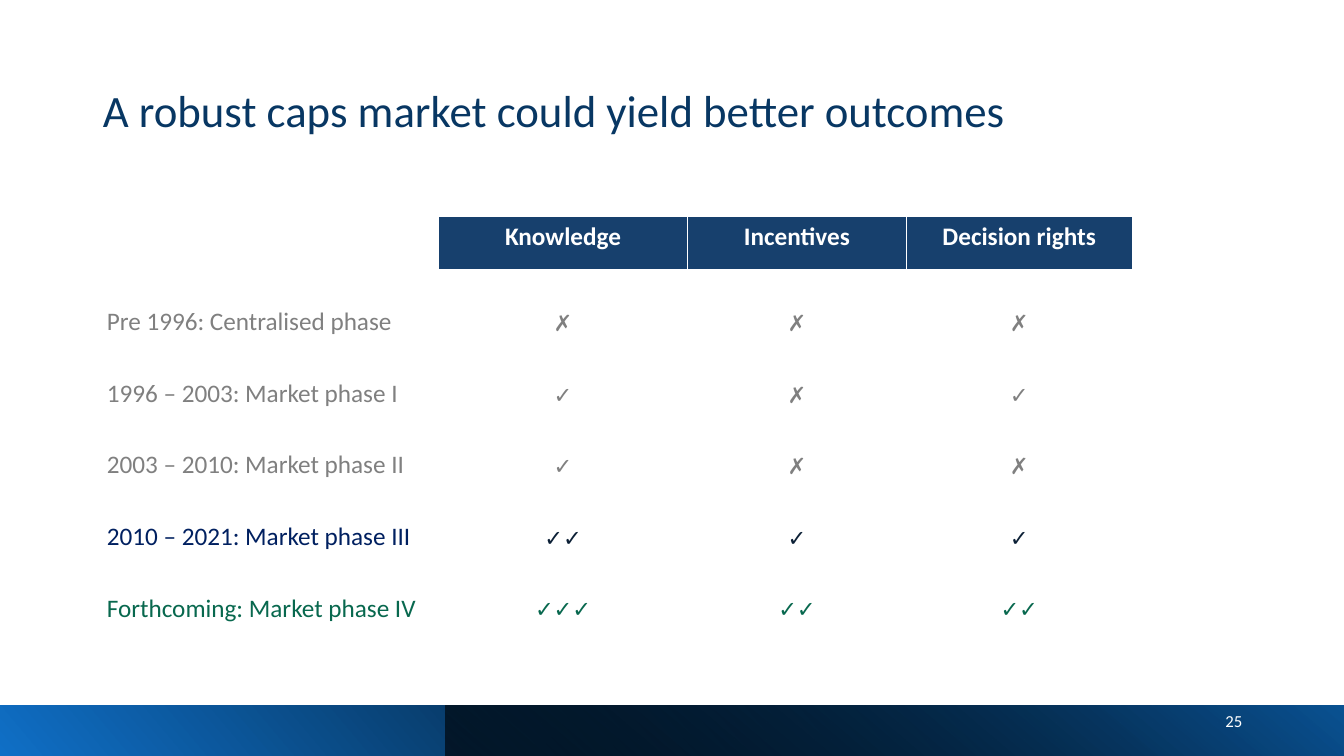
from typing import NamedTuple

from lxml import etree
from pptx import Presentation
from pptx.dml.color import RGBColor
from pptx.enum.shapes import MSO_SHAPE
from pptx.enum.text import MSO_ANCHOR, MSO_AUTO_SIZE, PP_ALIGN
from pptx.oxml import parse_xml
from pptx.oxml.ns import nsdecls, qn
from pptx.util import Inches, Pt

LEFT, CENTER, RIGHT = PP_ALIGN.LEFT, PP_ALIGN.CENTER, PP_ALIGN.RIGHT
TOP, MIDDLE, BOTTOM = MSO_ANCHOR.TOP, MSO_ANCHOR.MIDDLE, MSO_ANCHOR.BOTTOM
RECTANGLE = MSO_SHAPE.RECTANGLE
NO_AUTOFIT = MSO_AUTO_SIZE.NONE

FONT = "Calibri"
COLORS = {
    "title": "083763", "header": "17406D", "white": "FFFFFF", "past": "808080",
    "current": "002060", "current_mark": "0C2036", "future": "08684E",
    "bright": "0F6FC6", "black": "000000", "blue": "0B5394",
}


class GradientStop(NamedTuple):
    position: int
    color: str
    opacity: int = 100


class FooterBar(NamedTuple):
    left: float
    width: float
    rotation: int
    angle: int
    stops: list[GradientStop]


class Phase(NamedTuple):
    label: str
    marks: tuple[str, str, str]
    color: str
    mark_color: str


FOOTER_BARS = [
    FooterBar(0, 13.33, 180, 40, [GradientStop(0, "bright"), GradientStop(78, "black")]),
    FooterBar(4.42, 8.92, 0, 230, [GradientStop(0, "black", 63), GradientStop(100, "blue")]),
]
HEADERS = ["", "Knowledge", "Incentives", "Decision rights"]
PHASES = [
    Phase("Pre 1996: Centralised phase", ("✗", "✗", "✗"), "past", "past"),
    Phase("1996 – 2003: Market phase I", ("✓", "✗", "✓"), "past", "past"),
    Phase("2003 – 2010: Market phase II", ("✓", "✗", "✗"), "past", "past"),
    Phase("2010 – 2021: Market phase III", ("✓✓", "✓", "✓"), "current", "current_mark"),
    Phase("Forthcoming: Market phase IV", ("✓✓✓", "✓✓", "✓✓"), "future", "future"),
]
COLUMN_WIDTHS = [3.39, 2.47, 2.17, 2.24]
HEADER_HEIGHT, PHASE_HEIGHT = 0.54, 0.71


def write_text(text_frame, text: str, size: int, color: str, alignment=LEFT, bold=False) -> None:
    paragraph = text_frame.paragraphs[0]
    paragraph.alignment = alignment
    run = paragraph.add_run()
    run.text = text
    font_format = {"name": FONT, "size": Pt(size), "bold": bold}
    for attribute, value in font_format.items():
        setattr(run.font, attribute, value)
    run.font.color.rgb = RGBColor.from_string(COLORS[color])


def add_footer_bar(slide, bar: FooterBar) -> None:
    shape = slide.shapes.add_shape(
        RECTANGLE, Inches(bar.left), Inches(7), Inches(bar.width), Inches(0.5))
    shape.shadow.inherit = False
    shape.line.fill.background()
    shape.rotation = bar.rotation
    properties = shape._element.spPr
    properties.find(qn("a:xfrm")).set("flipH", "1")
    stops = "".join(
        f'<a:gs pos="{stop.position * 1000}"><a:srgbClr val="{COLORS[stop.color]}">'
        f'<a:alpha val="{stop.opacity * 1000}"/></a:srgbClr></a:gs>'
        for stop in bar.stops)
    gradient = parse_xml(
        f'<a:gradFill {nsdecls("a")} rotWithShape="1"><a:gsLst>{stops}</a:gsLst>'
        f'<a:lin ang="{bar.angle * 60000}" scaled="0"/></a:gradFill>')
    properties.find(qn("a:prstGeom")).addnext(gradient)


def set_borders(cell, top: int = 1, bottom: int = 1) -> None:
    """Put white borders, with widths in points, before the fill of the cell."""
    properties = cell._tc.get_or_add_tcPr()
    widths = {"a:lnL": 1, "a:lnR": 1, "a:lnT": top, "a:lnB": bottom}
    for index, (tag, width) in enumerate(widths.items()):
        line = etree.Element(qn(tag), w=str(Pt(width)))
        fill = etree.SubElement(line, qn("a:solidFill"))
        etree.SubElement(fill, qn("a:srgbClr"), val=COLORS["white"])
        properties.insert(index, line)


def add_phase_table(slide) -> None:
    row_heights = [HEADER_HEIGHT] + [PHASE_HEIGHT] * len(PHASES)
    table = slide.shapes.add_table(
        len(row_heights), len(HEADERS), Inches(0.96), Inches(2.15),
        Inches(sum(COLUMN_WIDTHS)), Inches(sum(row_heights))).table
    table.horz_banding = False
    for column, width in zip(table.columns, COLUMN_WIDTHS):
        column.width = Inches(width)
    for row, height in zip(table.rows, row_heights):
        row.height = Inches(height)

    for cell, header in zip(table.rows[0].cells, HEADERS):
        cell.vertical_anchor = TOP
        if header:
            cell.fill.solid()
            cell.fill.fore_color.rgb = RGBColor.from_string(COLORS["header"])
            write_text(cell.text_frame, header, 18, "white", CENTER, bold=True)
        else:
            cell.fill.background()
        set_borders(cell, bottom=3)

    for row_index, phase in enumerate(PHASES, start=1):
        label_cell, *mark_cells = table.rows[row_index].cells
        write_text(label_cell.text_frame, phase.label, 18, phase.color)
        for cell, mark in zip(mark_cells, phase.marks):
            write_text(cell.text_frame, mark, 16, phase.mark_color, CENTER)
        for cell in (label_cell, *mark_cells):
            cell.vertical_anchor = BOTTOM
            cell.fill.background()
            set_borders(cell, top=3 if row_index == 1 else 1)


def format_title(title) -> None:
    place = {"left": 0.92, "top": 0.4, "width": 11.5, "height": 1.45}
    for attribute, value in place.items():
        setattr(title, attribute, Inches(value))
    text_frame = title.text_frame
    text_frame.auto_size = NO_AUTOFIT
    text_frame.vertical_anchor = MIDDLE
    write_text(text_frame, "A robust caps market could yield better outcomes", 32, "title")
    text_frame.paragraphs[0].line_spacing = 0.9


def add_page_number(slide) -> None:
    text_frame = slide.shapes.add_textbox(
        Inches(9.42), Inches(6.95), Inches(3), Inches(0.4)).text_frame
    text_frame.word_wrap = True
    text_frame.vertical_anchor = MIDDLE
    write_text(text_frame, "25", 12, "white", RIGHT)


def main() -> None:
    presentation = Presentation()
    presentation.slide_width = Inches(13.33)
    presentation.slide_height = Inches(7.5)
    slide = presentation.slides.add_slide(presentation.slide_layouts.get_by_name("Title Only"))
    for bar in FOOTER_BARS:
        add_footer_bar(slide, bar)
    format_title(slide.shapes.title)
    add_page_number(slide)
    add_phase_table(slide)
    presentation.save("out.pptx")


if __name__ == "__main__":
    main()
